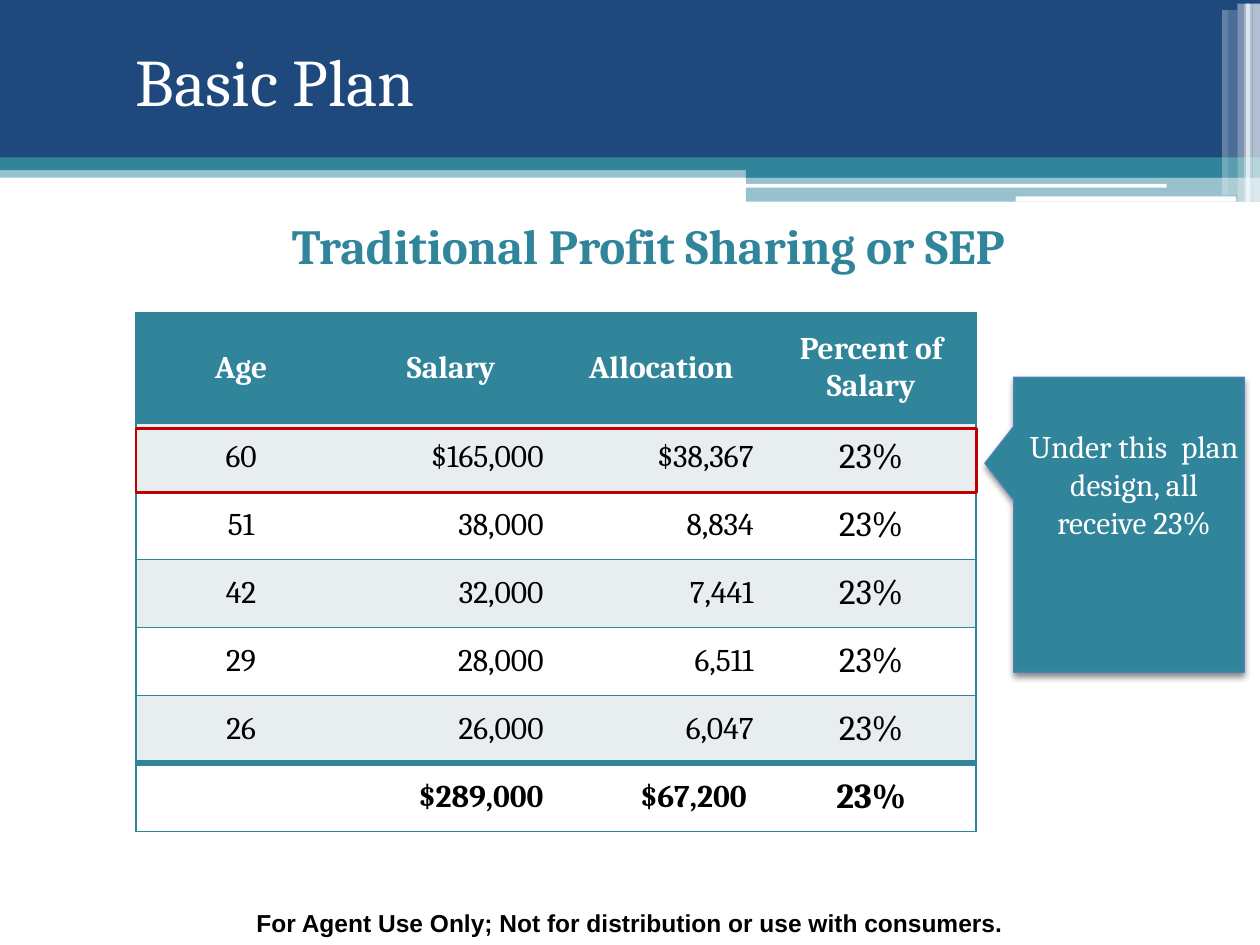
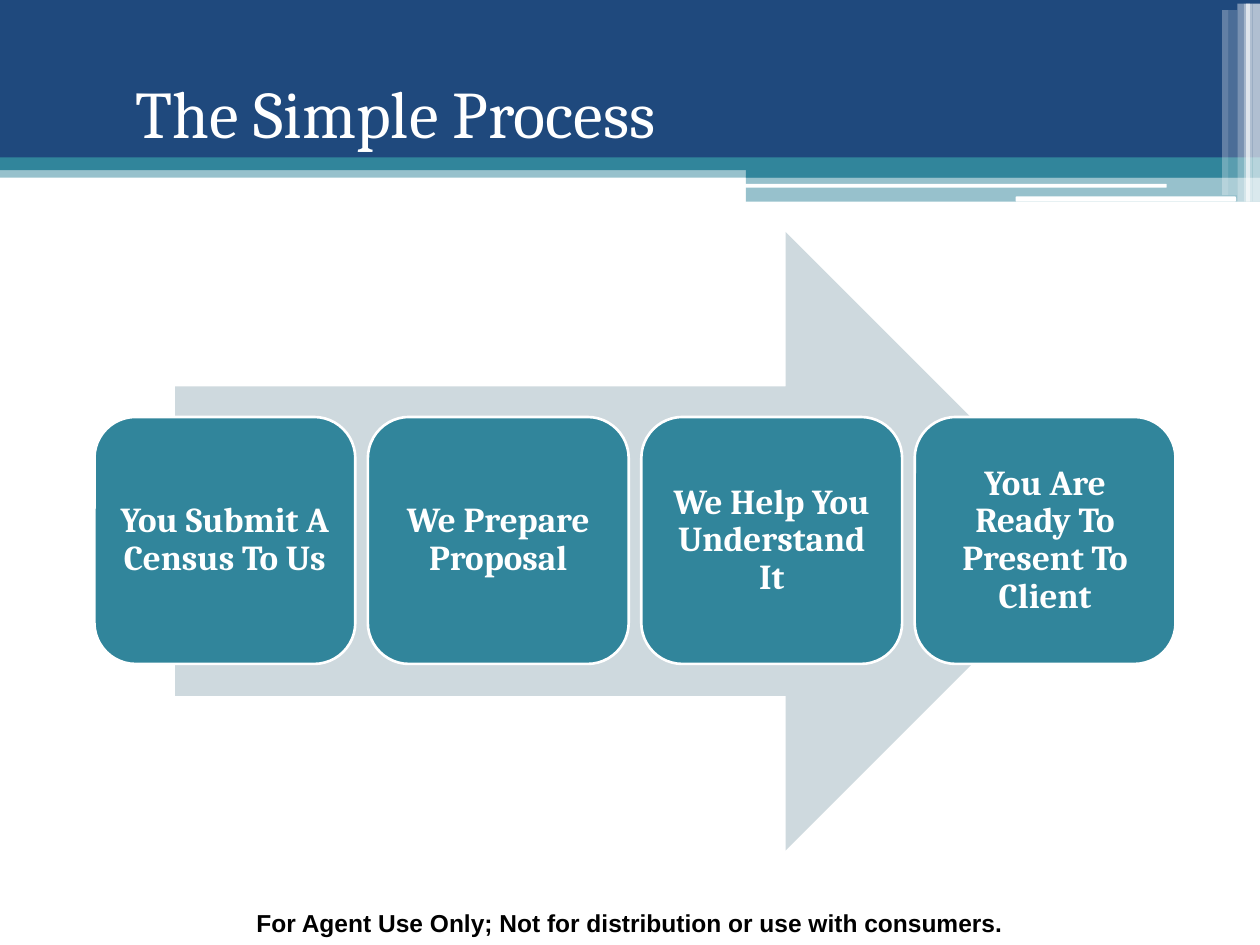
from lxml.etree import SubElement
from pptx import Presentation
from pptx.dml.color import RGBColor
from pptx.enum.shapes import MSO_SHAPE as Shape
from pptx.enum.text import MSO_ANCHOR as Anchor, PP_ALIGN as Align
from pptx.oxml import parse_xml
from pptx.oxml.ns import nsdecls, qn
from pptx.util import Inches, Pt

# Content
FOOTER = "For Agent Use Only; Not for distribution or use with consumers."
PLAN_TITLE = "Basic Plan"
PLAN_HEADING = "Traditional Profit Sharing or SEP"
PLAN_NOTE = "Under this  plan design, all receive 23%"
PLAN_ROWS = [
    ("Age", "Salary", "Allocation", "Percent of Salary"),
    ("60", "$165,000", "$38,367", "23%"),
    ("51", "38,000", "8,834", "23%"),
    ("42", "32,000", "7,441", "23%"),
    ("29", "28,000", "6,511", "23%"),
    ("26", "26,000", "6,047", "23%"),
    ("", "$289,000", "$67,200 ", "23%"),
]
PROCESS_TITLE = "The Simple Process"
PROCESS_STEPS = [
    "You Submit A Census To Us",
    "We Prepare Proposal",
    "We Help You Understand It",
    "You Are Ready To Present To Client",
]

# Shared look
COLORS = {
    "navy": "1F497D", "teal": "31859B", "white": "FFFFFF", "black": "000000",
    "stripe": "E8EDEF", "arrow": "CED9DE", "red": "C00000", "blue": "4F81BD",
}
WIDTH, HEIGHT = 10, 7.5
SPLIT = 5.92  # where the right-hand part of the header starts
BANDS = [  # place, colour, opacity in percent
    ((0, 1.32, WIDTH, 0.09), "teal", 50),
    ((0, 0, WIDTH, 1.26), "navy", 100),
    ((0, 1.25, WIDTH, 0.1), "teal", 100),
    ((SPLIT, 1.31, WIDTH - SPLIT, 0.1), "teal", 100),
    ((SPLIT, 1.4, WIDTH - SPLIT, 0.2), "teal", 50),
]
RULES = [(5.91, 1.46, 3.35, 0.03), (8.06, 1.56, 1.75, 0.04)]
STRIPES = [  # left, width, top, height, opacity
    (9.94, 0.07, 0.03, 1.57, 65), (9.89, 0.05, 0.03, 1.57, 65),
    (9.87, 0.05, 0.03, 1.57, 60), (9.82, 0.05, 0.03, 1.57, 40),
    (9.75, 0.07, 0.08, 1.47, 20), (9.7, 0.05, 0.08, 1.47, 30),
]


def rgb(name):
    return RGBColor.from_string(COLORS[name])


def write(frame, text, size=18, color="white", font="Cambria", bold=False,
          align=Align.CENTER, spacing=None, before=None):
    para = frame.paragraphs[0]
    para.alignment = align
    if spacing:
        para.line_spacing = spacing
    if before:
        para.space_before = Pt(before)
    span = para.add_run()
    span.text = text
    span.font.size, span.font.name, span.font.bold = Pt(size), font, bold
    span.font.color.rgb = rgb(color)


def add_text(page, place, text, anchor=Anchor.TOP, **style):
    frame = page.shapes.add_textbox(*map(Inches, place)).text_frame
    frame.word_wrap = True
    frame.vertical_anchor = anchor
    write(frame, text, **style)


def add_box(page, place, fill=None, opacity=100, line=None, weight=1.5,
            kind=Shape.RECTANGLE):
    box = page.shapes.add_shape(kind, *map(Inches, place))
    box.shadow.inherit = False
    if fill:
        box.fill.solid()
        box.fill.fore_color.rgb = rgb(fill)
    else:
        box.fill.background()
    if opacity < 100:
        color = box.element.spPr.find(qn("a:solidFill"))[0]
        SubElement(color, qn("a:alpha"), val=str(opacity * 1000))
    if line:
        box.line.color.rgb = rgb(line)
        box.line.width = Pt(weight)
    else:
        box.line.fill.background()
    return box


def add_page(deck, title, title_place):
    page = deck.slides.add_slide(deck.slide_layouts[6])
    for place, color, opacity in BANDS:
        add_box(page, place, color, opacity)
    for place in RULES:
        add_box(page, place, "white", kind=Shape.ROUNDED_RECTANGLE)
    for left, width, top, height, opacity in STRIPES:
        add_box(page, (left, top, width, height), "white", opacity)
    add_text(page, (0, 7.16, WIDTH, 0.34), FOOTER, size=14, color="black",
             font="Arial", bold=True)
    add_text(page, title_place, title, Anchor.MIDDLE, size=38, align=Align.LEFT)
    return page


def set_borders(cell, **weights):
    """Give each side (L, R, T, B) a teal line, or none at weight 0."""
    props = cell._tc.get_or_add_tcPr()
    for index, (side, weight) in enumerate(weights.items()):
        paint = (f'<a:solidFill><a:srgbClr val="{COLORS["teal"]}"/></a:solidFill>'
                 if weight else "<a:noFill/>")
        props.insert(index, parse_xml(
            f'<a:ln{side} {nsdecls("a")} w="{Pt(weight)}">{paint}</a:ln{side}>'))


def add_plan_table(page, left, top, column, header, row_height):
    count, columns = len(PLAN_ROWS), len(PLAN_ROWS[0])
    last = count - 1
    table = page.shapes.add_table(
        count, columns, Inches(left), Inches(top), Inches(column * columns),
        Inches(header + row_height * last)).table
    table.first_row = table.horz_banding = False
    for part in table.columns:
        part.width = Inches(column)
    for r, values in enumerate(PLAN_ROWS):
        table.rows[r].height = Inches(row_height if r else header)
        fill = "teal" if r == 0 else "stripe" if r % 2 and r < last else "white"
        for c, value in enumerate(values):
            cell = table.cell(r, c)
            cell.vertical_anchor = Anchor.MIDDLE
            cell.fill.solid()
            cell.fill.fore_color.rgb = rgb(fill)
            set_borders(cell, L=int(c == 0), R=int(c == columns - 1),
                        T=4 if r == last else 1, B=4 if r == last - 1 else 1)
            if value:
                write(cell.text_frame, value,
                      size=20 if r and c == columns - 1 else 18,
                      color="black" if r else "white", bold=r in (0, last),
                      align=Align.RIGHT if r and c in (1, 2) else Align.CENTER)


def build_plan(deck):
    page = add_page(deck, PLAN_TITLE, (0.98, -0.25, 8.05, 1.77))
    add_text(page, (1.08, 1.75, 8.13, 0.5), PLAN_HEADING, size=28, color="teal",
             bold=True, spacing=0.8, before=2.8)
    left, column = 1.08, 1.667
    add_plan_table(page, left, 2.48, column, 0.88, 0.54)
    add_box(page, (left, 3.4, column * 4, 0.51), line="red")

    # Callout pointing left at the table
    callout = add_box(page, (7.79, 3.25, 2.34, 1.83), "teal", line="blue",
                      weight=0.75, kind=Shape.RECTANGULAR_CALLOUT)
    callout.rotation = 90
    effects = callout.element.spPr.find(qn("a:effectLst"))
    shadow = SubElement(effects, qn("a:outerShdw"), blurRad=str(Pt(4)),
                        dist=str(Pt(2)), dir="5400000", rotWithShape="0")
    color = SubElement(shadow, qn("a:srgbClr"), val=COLORS["black"])
    SubElement(color, qn("a:alpha"), val="45000")
    add_text(page, (8.04, 3.34, 1.92, 1.01), PLAN_NOTE)


def build_process(deck):
    page = add_page(deck, PROCESS_TITLE, (0.98, 0.18, 8.05, 1.41))
    add_box(page, (1.39, 1.84, 7.3, 4.91), "arrow", kind=Shape.RIGHT_ARROW)
    left, width, gap = 0.75, 2.07, 0.1
    for index, step in enumerate(PROCESS_STEPS):
        box = add_box(page, (left + index * (width + gap), 3.31, width, 1.96),
                      "teal", line="white", kind=Shape.ROUNDED_RECTANGLE)
        frame = box.text_frame
        frame.word_wrap = True
        frame.vertical_anchor = Anchor.MIDDLE
        frame.margin_left = frame.margin_right = Inches(0.08)
        frame.margin_top = frame.margin_bottom = Inches(0.08)
        write(frame, step, size=20, bold=True, spacing=0.9)


def main():
    deck = Presentation()
    deck.slide_width, deck.slide_height = Inches(WIDTH), Inches(HEIGHT)
    build_plan(deck)
    build_process(deck)
    deck.save("out.pptx")


if __name__ == "__main__":
    main()
